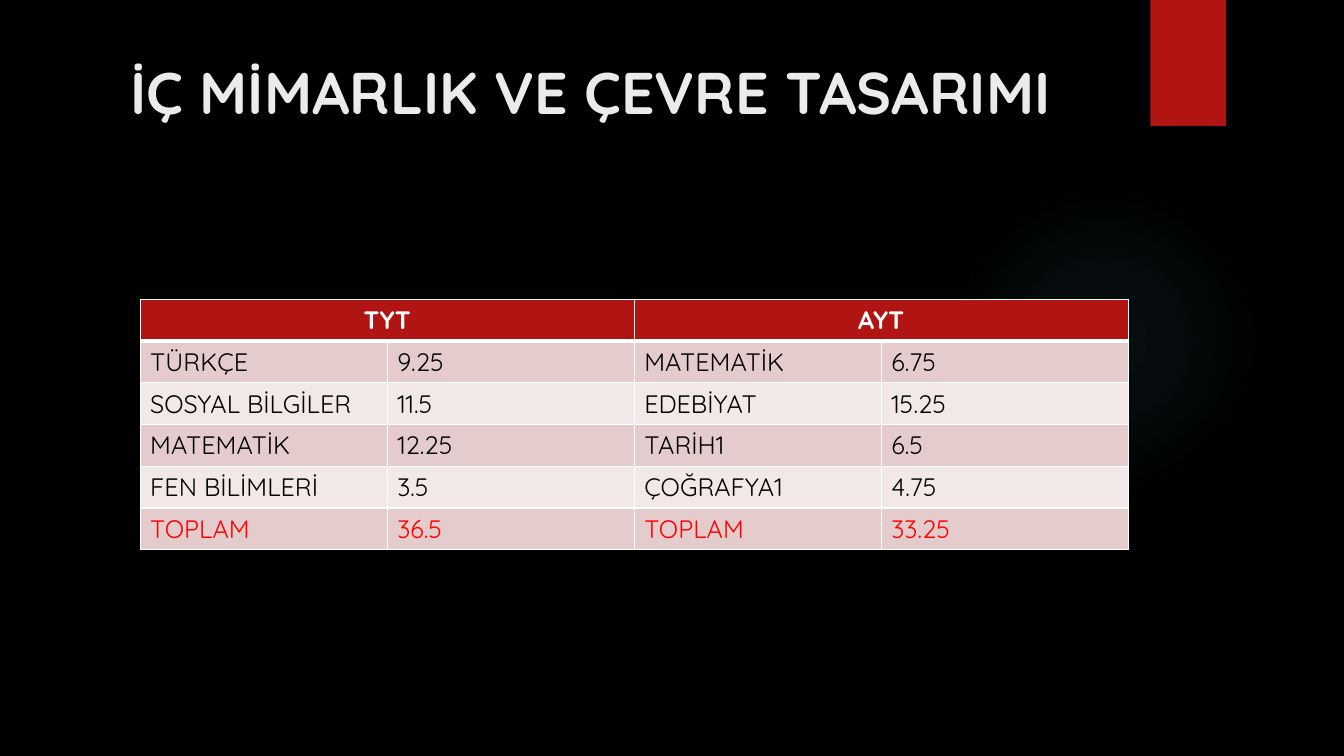
import pptx
import pptx.dml.color
import pptx.enum.shapes
import pptx.enum.text
import pptx.oxml
import pptx.oxml.ns
import pptx.util

Inches = pptx.util.Inches
SHAPES = pptx.enum.shapes.MSO_SHAPE
ALIGN = pptx.enum.text.PP_ALIGN
RED, WHITE = "B01513", "FFFFFF"
BANDS = ("F2E8E7", "E4CCCC")
SCORES = [
    ("TYT", "", "AYT", ""),
    ("TÜRKÇE", "9.25", "MATEMATİK", "6.75"),
    ("SOSYAL BİLGİLER", "11.5", "EDEBİYAT", "15.25"),
    ("MATEMATİK", "12.25", "TARİH1", "6.5"),
    ("FEN BİLİMLERİ", "3.5", "ÇOĞRAFYA1", "4.75"),
    ("TOPLAM", "36.5", "TOPLAM", "33.25"),
]


def color(value):
    return pptx.dml.color.RGBColor.from_string(value)


class SlideBuilder:
    """Holds the slide and its style, and adds each kind of element."""

    def __init__(self, presentation, font_name, background):
        self.slide = presentation.slides.add_slide(presentation.slide_layouts[5])
        self.font_name = font_name
        self.slide.background.fill.solid()
        self.slide.background.fill.fore_color.rgb = color(background)

    def set_text(self, frame, text, size, text_color, bold, alignment):
        paragraph = frame.paragraphs[0]
        paragraph.text = text
        paragraph.alignment = alignment
        font = paragraph.runs[0].font
        values = {"name": self.font_name, "size": pptx.util.Pt(size), "bold": bold}
        for name, value in values.items():
            setattr(font, name, value)
        font.color.rgb = color(text_color)

    def shape(self, kind, left, top, width, height, fill):
        shape = self.slide.shapes.add_shape(
            kind, Inches(left), Inches(top), Inches(width), Inches(height))
        shape.shadow.inherit = False
        shape.fill.solid()
        shape.fill.fore_color.rgb = color(fill)
        shape.line.fill.background()
        return shape

    def glow(self, left, top, size, fill, stops):
        shape = self.shape(SHAPES.OVAL, left, top, size, size, fill)
        stop_xml = "".join(
            f'<a:gs pos="{position * 1000}"><a:srgbClr val="{fill}">'
            f'<a:alpha val="{alpha * 1000}"/></a:srgbClr></a:gs>'
            for position, alpha in stops)
        gradient = pptx.oxml.parse_xml(
            f'<a:gradFill {pptx.oxml.ns.nsdecls("a")}><a:gsLst>{stop_xml}</a:gsLst>'
            '<a:path path="circle"><a:fillToRect l="50000" t="50000" r="50000" b="50000"/>'
            '</a:path></a:gradFill>')
        properties = shape._element.spPr
        properties.replace(properties.find(pptx.oxml.ns.qn("a:solidFill")), gradient)

    def title(self, text, left, top, width, height):
        title = self.slide.shapes.title
        bounds = {"left": left, "top": top, "width": width, "height": height}
        for name, value in bounds.items():
            setattr(title, name, Inches(value))
        frame = title.text_frame
        settings = {"word_wrap": True, "auto_size": pptx.enum.text.MSO_AUTO_SIZE.NONE,
                    "vertical_anchor": pptx.enum.text.MSO_ANCHOR.TOP}
        for name, value in settings.items():
            setattr(frame, name, value)
        self.set_text(frame, text, 42, "EBEBEB", True, ALIGN.CENTER)

    def borders(self, cell, widths):
        properties = cell._tc.get_or_add_tcPr()
        for index, (side, width) in enumerate(widths.items()):
            properties.insert(index, pptx.oxml.parse_xml(
                f'<a:ln{side} {pptx.oxml.ns.nsdecls("a")} w="{pptx.util.Pt(width)}">'
                f'<a:solidFill><a:srgbClr val="{WHITE}"/></a:solidFill></a:ln{side}>'))

    def table(self, rows, left, top, column_width, row_height):
        columns = len(rows[0])
        table = self.slide.shapes.add_table(
            len(rows), columns, Inches(left), Inches(top),
            Inches(column_width * columns), Inches(row_height * len(rows))).table
        for column in table.columns:
            column.width = Inches(column_width)
        for row in table.rows:
            row.height = Inches(row_height)
        for column in range(0, columns, 2):
            table.cell(0, column).merge(table.cell(0, column + 1))
        for row_index, values in enumerate(rows):
            header, total = row_index == 0, row_index == len(rows) - 1
            text_color = WHITE if header else "FF0000" if total else "000000"
            alignment = ALIGN.CENTER if header else ALIGN.LEFT
            widths = {"L": 1, "R": 1, "T": 3 if row_index == 1 else 1,
                      "B": 3 if header else 1}
            for column_index, value in enumerate(values):
                cell = table.cell(row_index, column_index)
                cell.fill.solid()
                cell.fill.fore_color.rgb = color(RED if header else BANDS[row_index % 2])
                self.borders(cell, widths)
                if value:
                    self.set_text(cell.text_frame, value, 18, text_color, header, alignment)


def main():
    presentation = pptx.Presentation()
    presentation.slide_width = Inches(13.33)
    presentation.slide_height = Inches(7.5)
    builder = SlideBuilder(presentation, "Quicksand", "000000")
    builder.glow(9.41, 1.83, 3.08, "50B9C1", [(0, 7), (36, 6), (69, 0), (100, 0)])
    builder.shape(SHAPES.RECTANGLE, 11.41, 0, 0.75, 1.25, RED)
    builder.title("İÇ MİMARLIK VE ÇEVRE TASARIMI", 0.71, 0.5, 10.29, 1.53)
    builder.table(SCORES, 1.39, 2.97, 2.45, 0.41)
    presentation.save("out.pptx")


if __name__ == "__main__":
    main()
